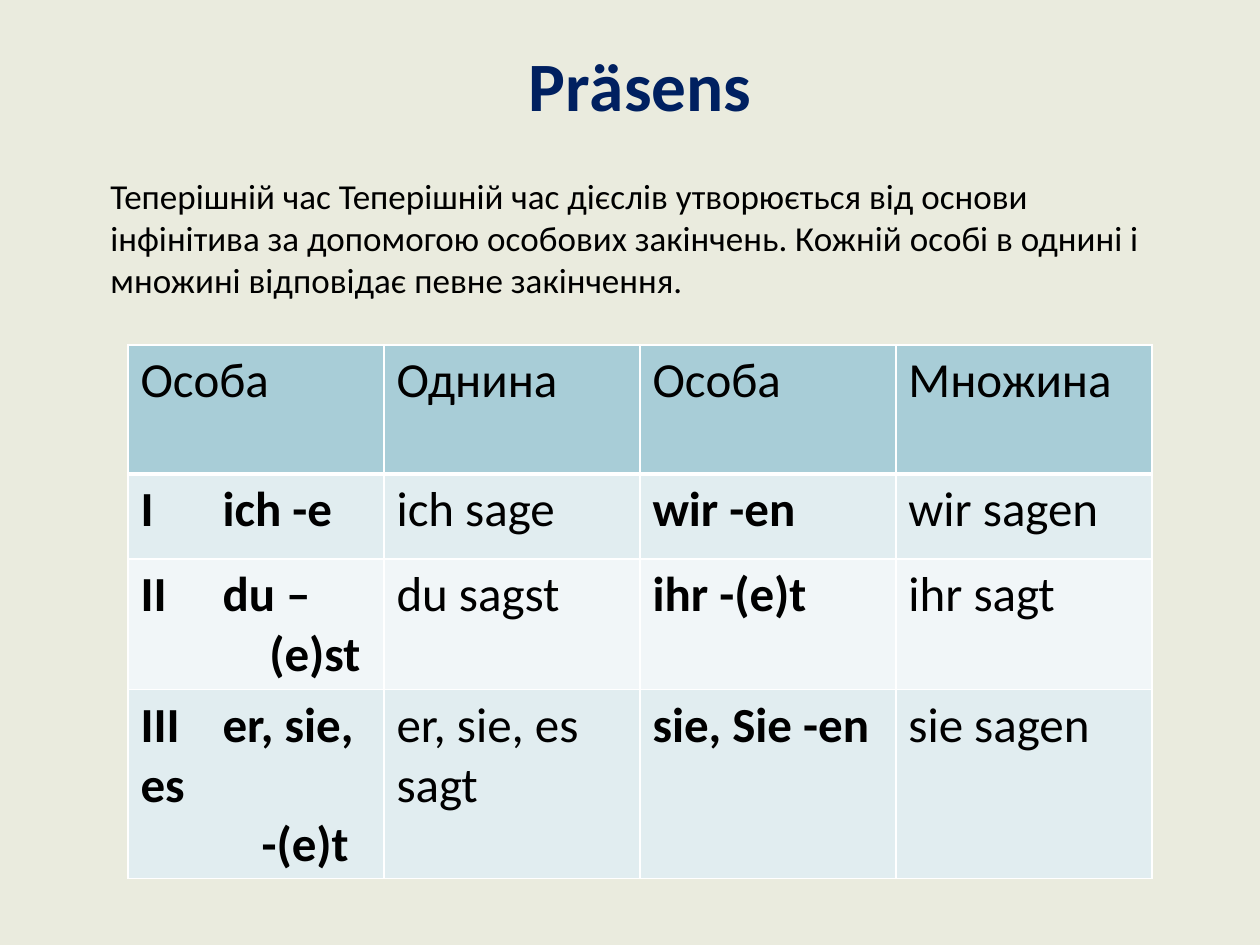
"""Build a slide on the German present tense with a table of verb endings."""
from lxml.etree import SubElement
from pptx import Presentation
from pptx.dml.color import RGBColor
from pptx.enum.text import MSO_ANCHOR, PP_ALIGN
from pptx.oxml import parse_xml
from pptx.oxml.ns import nsdecls, qn
from pptx.util import Pt

PX = 914400 // 126
BACKGROUND = RGBColor(0xEA, 0xEB, 0xDE)
NAVY = RGBColor(0x00, 0x20, 0x60)
BLACK = RGBColor(0x00, 0x00, 0x00)
HEADER = RGBColor(0xA8, 0xCD, 0xD7)
BAND_DARK = RGBColor(0xE1, 0xED, 0xF0)
BAND_LIGHT = RGBColor(0xF1, 0xF6, 0xF8)

INTRODUCTION = (
    "Теперішній час Теперішній час дієслів утворюється від основи інфінітива "
    "за допомогою особових закінчень. Кожній особі в однині і множині "
    "відповідає певне закінчення."
)
ROWS = [
    (129, HEADER, ["Особа", "Однина", "Особа", "Множина"]),
    (85, BAND_DARK, ["I\tich -e", "ich sage", "wir -en", "wir sagen"]),
    (130, BAND_LIGHT, ["II\tdu –\n(e)st ", "du sagst", "ihr -(e)t", "ihr sagt"]),
    (189, BAND_DARK, ["III\ter, sie, es\n-(e)t", "er, sie, es sagt", "sie, Sie -en", "sie sagen"]),
]
COLUMN_WIDTH = 256
TAB_POSITION = 82
ENDING_INDENT = 121


def set_font(paragraph, size, color, bold=False):
    paragraph.font.name = "Calibri"
    paragraph.font.size = Pt(size)
    paragraph.font.bold = bold
    paragraph.font.color.rgb = color


def add_borders(cell, bottom_width):
    widths = {"lnL": 1, "lnR": 1, "lnT": 1, "lnB": bottom_width}
    for side, width in widths.items():
        cell._tc.get_or_add_tcPr().append(parse_xml(
            f'<a:{side} {nsdecls("a")} w="{Pt(width)}"><a:solidFill>'
            f'<a:srgbClr val="FFFFFF"/></a:solidFill></a:{side}>'
        ))


presentation = Presentation()
presentation.slide_width = 1260 * PX
presentation.slide_height = 945 * PX
slide = presentation.slides.add_slide(presentation.slide_layouts[5])
slide.background.fill.solid()
slide.background.fill.fore_color.rgb = BACKGROUND

title = slide.shapes.title
title.left, title.top, title.width, title.height = 374 * PX, 38 * PX, 532 * PX, 91 * PX
title.text_frame.text = "Prӓsens"
title.text_frame.vertical_anchor = MSO_ANCHOR.MIDDLE
title.text_frame.paragraphs[0].alignment = PP_ALIGN.CENTER
set_font(title.text_frame.paragraphs[0], 39.6, NAVY, True)

introduction = slide.shapes.add_textbox(98 * PX, 168 * PX, 1063 * PX, 217 * PX)
introduction.text_frame.word_wrap = True
introduction.text_frame.text = INTRODUCTION
set_font(introduction.text_frame.paragraphs[0], 20, BLACK)

table_height = sum(height for height, color, texts in ROWS)
table = slide.shapes.add_table(
    len(ROWS), 4, 128 * PX, 345 * PX, 4 * COLUMN_WIDTH * PX, table_height * PX
).table
table.first_row = False
table.horz_banding = False
for column in table.columns:
    column.width = COLUMN_WIDTH * PX

for row_index, (height, color, texts) in enumerate(ROWS):
    table.rows[row_index].height = height * PX
    for column_index, text in enumerate(texts):
        cell = table.cell(row_index, column_index)
        add_borders(cell, 3 if row_index == 0 else 1)
        cell.fill.solid()
        cell.fill.fore_color.rgb = color
        cell.text_frame.text = text
        for paragraph in cell.text_frame.paragraphs:
            set_font(paragraph, 28, BLACK, row_index > 0 and column_index % 2 == 0)

for row_index in (1, 2, 3):
    properties = table.cell(row_index, 0).text_frame.paragraphs[0]._p.get_or_add_pPr()
    tab_list = SubElement(properties, qn("a:tabLst"))
    SubElement(tab_list, qn("a:tab"), pos=str(TAB_POSITION * PX), algn="l")
    properties.insert(0, tab_list)

table.cell(2, 0).text_frame.paragraphs[1].alignment = PP_ALIGN.RIGHT
third_ending = table.cell(3, 0).text_frame.paragraphs[1]._p.get_or_add_pPr()
third_ending.set("marL", str(ENDING_INDENT * PX))
third_ending.set("indent", "0")

presentation.save("out.pptx")
